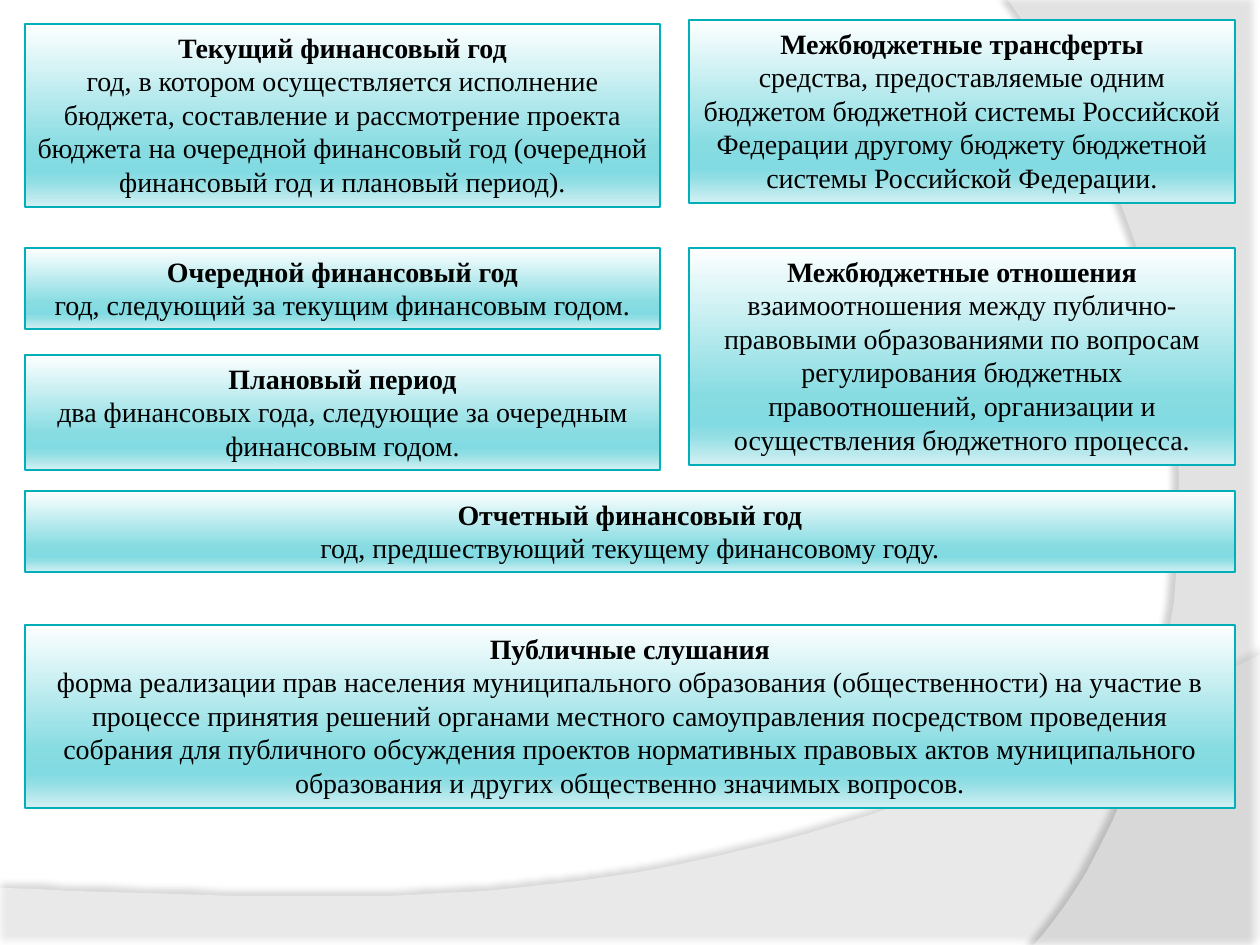
from typing import NamedTuple

from lxml import etree
from pptx import Presentation
from pptx import util as u
from pptx.dml.color import RGBColor
from pptx.enum import shapes, text
from pptx.oxml.ns import qn

EMU_PER_PX = 914400 / 126
SLIDE_W, SLIDE_H = 1260, 945
LEFT, RIGHT = 25, 689
LEFT_W, RIGHT_W, FULL_W = 635, 546, 1210
FONT = "Times New Roman"
BORDER = "00AFB7"
GRADIENT = [(0, "FEFFFF"), (68, "87DCE2"), (81, "82DBE2"), (86, "90DEE4"), (100, "D3F0F3")]

Point = tuple[int, int]


class Definition(NamedTuple):
    left: int
    top: int
    width: int
    height: int
    term: str
    meaning: str


class Wave(NamedTuple):
    """Straight corners, then a cubic curve from the last corner through two controls to its end."""
    corners: list[Point]
    controls: list[Point]
    end: Point
    opacity: int
    shadow_opacity: int
    shadow_distance: float
    shadow_angle: int


WAVES = [
    Wave([(0, 888), (0, 945), (1260, 945), (1260, 655)], [(704, 919), (493, 906)], (0, 888),
         45, 35, 3.5, 270),
    Wave([(1008, 0), (1260, 0), (1260, 945), (1034, 945)], [(1178, 780), (1283, 378)], (1008, 0),
         40, 45, 4, 180),
]

DEFINITIONS = [
    Definition(RIGHT, 248, RIGHT_W, 217, "Межбюджетные отношения",
               "взаимоотношения между публично-правовыми образованиями по вопросам регулирования "
               "бюджетных правоотношений, организации и осуществления бюджетного процесса."),
    Definition(RIGHT, 20, RIGHT_W, 183, "Межбюджетные трансферты",
               "средства, предоставляемые одним бюджетом бюджетной системы Российской Федерации "
               "другому бюджету бюджетной системы Российской Федерации."),
    Definition(LEFT, 24, LEFT_W, 183, "Текущий финансовый год",
               "год, в котором осуществляется исполнение бюджета, составление и рассмотрение "
               "проекта бюджета на очередной финансовый год (очередной финансовый год и "
               "плановый период)."),
    Definition(LEFT, 248, LEFT_W, 81, "Очередной финансовый год",
               "год, следующий за текущим финансовым годом."),
    Definition(LEFT, 355, LEFT_W, 115, "Плановый период",
               "два финансовых года, следующие за очередным финансовым годом."),
    Definition(LEFT, 491, FULL_W, 81, "Отчетный финансовый год",
               "год, предшествующий текущему финансовому году."),
    Definition(LEFT, 625, FULL_W, 183, "Публичные слушания",
               "форма реализации прав населения муниципального образования (общественности) на "
               "участие в процессе принятия решений органами местного самоуправления посредством "
               "проведения собрания для публичного обсуждения проектов нормативных правовых актов "
               "муниципального образования и других общественно значимых вопросов."),
]


def px(length: int) -> u.Emu:
    return u.Emu(round(length * EMU_PER_PX))


def color(value: str) -> RGBColor:
    return RGBColor.from_string(value)


def add_element(parent, tag: str, **attributes):
    return etree.SubElement(parent, qn(tag), {k: str(v) for k, v in attributes.items()})


def curve_points(start: Point, first: Point, second: Point, end: Point, steps: int = 40) -> list[Point]:
    points = []
    for step in range(1, steps + 1):
        t = step / steps
        weights = ((1 - t) ** 3, 3 * t * (1 - t) ** 2, 3 * t * t * (1 - t), t ** 3)
        anchors = (start, first, second, end)
        points.append(tuple(sum(w * p[axis] for w, p in zip(weights, anchors)) for axis in (0, 1)))
    return points


def draw_wave(slide, wave: Wave) -> None:
    builder = slide.shapes.build_freeform(*wave.corners[0], scale=EMU_PER_PX)
    outline = wave.corners[1:] + curve_points(wave.corners[-1], *wave.controls, wave.end)
    builder.add_line_segments(outline, close=True)
    shape = builder.convert_to_shape()
    shape.fill.solid()
    shape.fill.fore_color.rgb = color("FFFFFF")
    shape.line.fill.background()
    properties = shape.element.spPr
    add_element(properties.find(".//" + qn("a:solidFill"))[0], "a:alpha", val=wave.opacity * 1000)
    shadow = add_element(add_element(properties, "a:effectLst"), "a:outerShdw",
                         blurRad=u.Pt(4), dist=u.Pt(wave.shadow_distance),
                         dir=wave.shadow_angle * 60000, algn="ctr", rotWithShape=0)
    shade = add_element(shadow, "a:srgbClr", val="000000")
    add_element(shade, "a:alpha", val=wave.shadow_opacity * 1000)


def fill_gradient(shape) -> None:
    shape.fill.gradient()
    gradient = shape.element.spPr.find(qn("a:gradFill"))
    for child in list(gradient):
        gradient.remove(child)
    stops = add_element(gradient, "a:gsLst")
    for position, value in GRADIENT:
        add_element(add_element(stops, "a:gs", pos=position * 1000), "a:srgbClr", val=value)
    add_element(gradient, "a:lin", ang=90 * 60000, scaled=0)


def write(paragraph, words: str, *, bold: bool = False, size: int = 16, ink: str = "000000") -> None:
    paragraph.alignment = text.PP_ALIGN.CENTER
    run = paragraph.add_run()
    run.text = words
    run.font.name = FONT
    run.font.size = u.Pt(size)
    run.font.bold = bold
    run.font.color.rgb = color(ink)


def draw_definition(slide, item: Definition) -> None:
    box = slide.shapes.add_shape(shapes.MSO_SHAPE.RECTANGLE, px(item.left), px(item.top),
                                 px(item.width), px(item.height))
    fill_gradient(box)
    box.line.color.rgb = color(BORDER)
    box.line.width = u.Pt(0.75)
    box.shadow.inherit = False
    frame = box.text_frame
    frame.word_wrap = True
    frame.auto_size = text.MSO_AUTO_SIZE.SHAPE_TO_FIT_TEXT
    frame.vertical_anchor = text.MSO_ANCHOR.TOP
    write(frame.paragraphs[0], item.term, bold=True)
    write(frame.add_paragraph(), item.meaning)


def main() -> None:
    deck = Presentation()
    deck.slide_width, deck.slide_height = px(SLIDE_W), px(SLIDE_H)
    slide = deck.slides.add_slide(deck.slide_layouts[6])
    for wave in WAVES:
        draw_wave(slide, wave)
    for item in DEFINITIONS:
        draw_definition(slide, item)
    deck.save("out.pptx")


if __name__ == "__main__":
    main()
